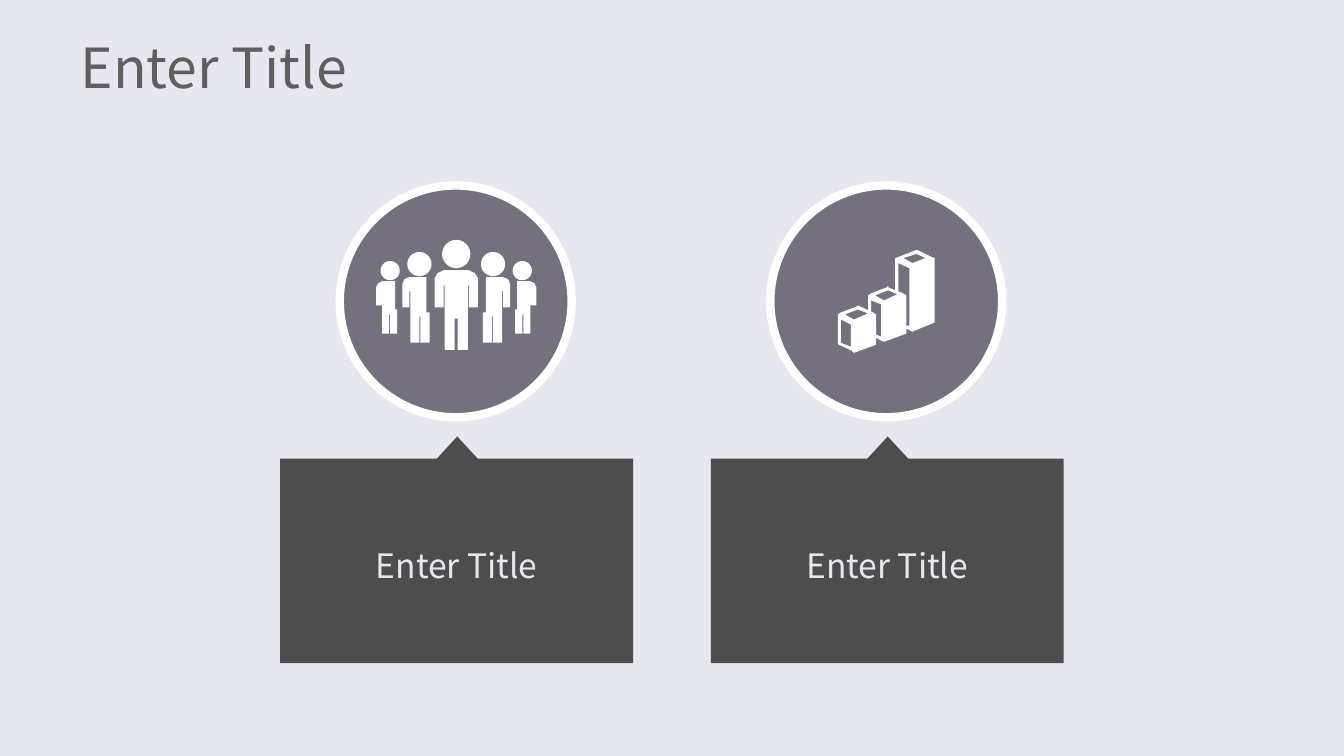
"""Build a slide with two captioned icon cards under a title."""
from dataclasses import dataclass
from math import cos, pi, sin

from pptx import Presentation
from pptx.dml.color import RGBColor
from pptx.enum.shapes import MSO_SHAPE
from pptx.enum.text import MSO_ANCHOR, PP_ALIGN
from pptx.util import Pt

SCALE = 9144
STEP = 427
AXIS = 905


@dataclass(frozen=True)
class Theme:
    """Colours, font and type sizes."""
    back: str = "E7E7EF"
    disc: str = "74707E"
    panel: str = "4D4D4D"
    white: str = "FFFFFF"
    title: str = "5F5F5F"
    font: str = "Noto Sans CJK JP"
    large: float = 39.5
    body: float = 24
    ring: float = 6


class Deck:
    """Draw styled elements on the current slide, in px."""

    def __init__(self, theme, width, height):
        self.theme = theme
        self.file = Presentation()
        self.file.slide_width = width * SCALE
        self.file.slide_height = height * SCALE
        self.slide = self.file.slides.add_slide(self.file.slide_layouts[6])
        self.shapes = self.slide.shapes
        fill = self.slide.background.fill
        fill.solid()
        fill.fore_color.rgb = RGBColor.from_string(theme.back)

    def group(self):
        self.shapes = self.slide.shapes.add_group_shape().shapes

    def paint(self, shape, color, edge=None):
        shape.shadow.inherit = False
        shape.fill.solid()
        shape.fill.fore_color.rgb = RGBColor.from_string(color)
        if edge:
            shape.line.color.rgb = RGBColor.from_string(edge)
            shape.line.width = Pt(self.theme.ring)
        else:
            shape.line.fill.background()

    def shape(self, kind, box, color, edge=None):
        item = self.shapes.add_shape(kind, *(n * SCALE for n in box))
        self.paint(item, color, edge)
        return item

    def icon(self, paths, color):
        pen = None
        for path in paths:
            (x, y), *rest = [(x * SCALE, y * SCALE) for x, y in path]
            if pen is None:
                pen = self.shapes.build_freeform(x, y)
            else:
                pen.move_to(x, y)
            pen.add_line_segments(rest)
        self.paint(pen.convert_to_shape(), color)

    def label(self, item, text, size, color, align, space=None):
        frame = item.text_frame
        frame.word_wrap = True
        frame.vertical_anchor = MSO_ANCHOR.MIDDLE
        line = frame.paragraphs[0]
        line.alignment = align
        line.line_spacing = space
        run = line.add_run()
        run.text = text
        run.font.name = self.theme.font
        run.font.size = Pt(size)
        run.font.color.rgb = RGBColor.from_string(color)

    def title(self, text, box):
        item = self.slide.shapes.add_textbox(*(n * SCALE for n in box))
        frame = item.text_frame
        frame.margin_left = frame.margin_right = 13 * SCALE
        frame.margin_top = frame.margin_bottom = 7 * SCALE
        self.label(item, text, self.theme.large, self.theme.title, PP_ALIGN.LEFT)

    def card(self, left, text, paths):
        look = self.theme
        self.group()
        self.shape(MSO_SHAPE.OVAL, (left + 59, 184, 230, 230), look.disc, look.white)
        panel = self.shape(MSO_SHAPE.RECTANGLE, (left, 455, 350, 203), look.panel)
        self.label(panel, text, look.body, look.back, PP_ALIGN.CENTER, 1.2)
        self.shape(MSO_SHAPE.ISOSCELES_TRIANGLE, (left + 146, 433, 59, 32), look.panel)
        self.icon(paths, look.white)


def head(x, y, size, count=36):
    turns = [2 * pi * n / count for n in range(count)]
    return [(x + size * cos(t), y + size * sin(t)) for t in turns]


def flip(points):
    return [(AXIS - x, y) for x, y in points]


def people():
    small = [(394, 307), (394, 331), (387, 331), (387, 312), (386, 312),
             (386, 331), (379, 331), (379, 303), (373, 303), (373, 285),
             (375, 281), (379, 279), (392, 279), (392, 307)]
    medium = [(426, 310), (426, 340), (417, 340), (417, 314), (416, 314),
              (416, 340), (407, 340), (407, 289), (406, 289), (406, 305),
              (399, 305), (399, 282), (401, 277), (406, 275), (423, 275),
              (423, 310)]
    half = [(451, 316), (451, 347), (441, 347), (441, 283), (440, 283),
            (440, 305), (431, 305), (431, 276), (434, 271), (440, 268)]
    side = [small, head(387, 268.5, 9.5), medium, head(416, 262, 12)]
    lead = [half + flip(half)[::-1], head(452.5, 252, 14)]
    return side + [flip(part) for part in side] + lead


def bars():
    rim = [(861, 293), (864, 291), (880, 285), (881, 283), (881, 285),
           (888, 288), (888, 256), (891, 255), (909, 248), (910, 248),
           (924, 255), (927, 256), (927, 320), (905, 329), (903, 328),
           (899, 326), (899, 331), (877, 339), (874, 338), (869, 335),
           (869, 342), (847, 350), (845, 348), (832, 342), (831, 341),
           (831, 312), (834, 310), (850, 304), (851, 303), (866, 310),
           (869, 312), (869, 332), (874, 334), (874, 302), (864, 298),
           (864, 309), (861, 308)]
    tops = [[(896, 256), (905, 261), (918, 256), (909, 252)],
            [(868, 293), (877, 298), (890, 292), (881, 288)],
            [(838, 312), (847, 317), (861, 311), (851, 307)]]
    sides = [[(844, 322), (834, 317), (834, 340), (844, 344)],
             [(891, 289), (896, 291), (899, 293), (899, 323), (902, 323),
              (902, 266), (891, 261)]]
    return [rim] + tops + sides


def main():
    deck = Deck(Theme(), 1333, 750)
    for spot, paths in enumerate((people(), bars())):
        deck.card(278 + spot * STEP, "Enter Title", paths)
    deck.title("Enter Title", (67, 30, 1200, 72))
    deck.file.save("out.pptx")


if __name__ == "__main__":
    main()
